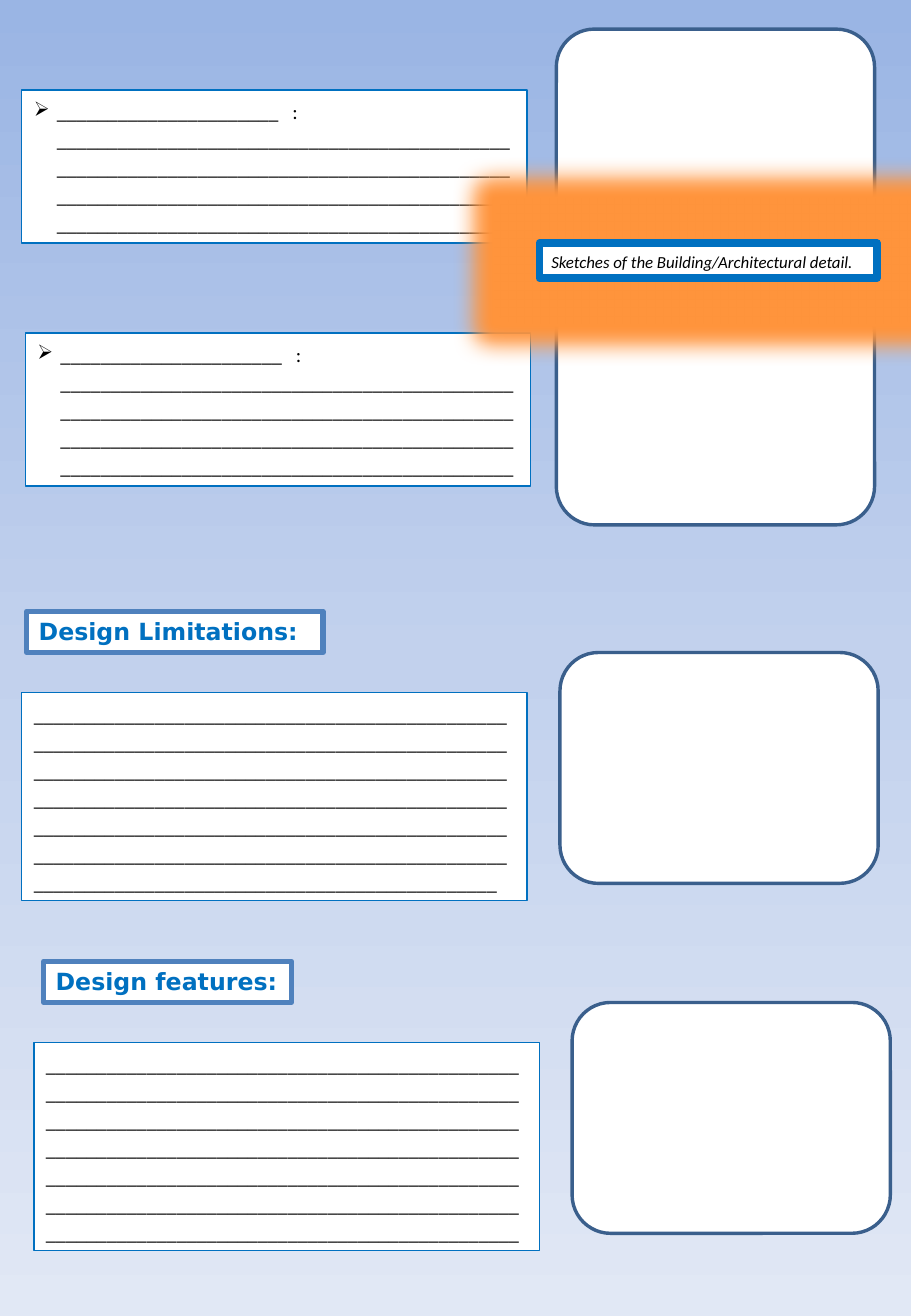
from copy import deepcopy

from lxml.etree import SubElement
from pptx import Presentation
from pptx.dml.color import RGBColor
from pptx.enum.shapes import MSO_SHAPE as Preset
from pptx.enum.text import MSO_ANCHOR, MSO_AUTO_SIZE, PP_ALIGN
from pptx.oxml.ns import qn
from pptx.util import Inches, Pt

WHITE = RGBColor(0xFF, 0xFF, 0xFF)
BLACK = RGBColor(0x00, 0x00, 0x00)
BLUE = RGBColor(0x00, 0x70, 0xC0)
HEADING_EDGE = RGBColor(0x4F, 0x81, 0xBD)
SKETCH_EDGE = RGBColor(0x3A, 0x5F, 0x8C)
GLOW = RGBColor(0xFF, 0x94, 0x3C)
SKY = [
    (0, RGBColor(0x9A, 0xB5, 0xE4)),
    (0.5, RGBColor(0xC2, 0xD1, 0xED)),
    (1, RGBColor(0xE1, 0xE8, 0xF5)),
]

NOTES_WIDTH = 4.16
SKETCH_WIDTH = 2.62
LABEL_BLANKS = 22
OBSERVATION_BLANKS = 180


def paint_background(slide):
    fill = slide.background.fill
    fill.gradient()
    fill.gradient_angle = 270
    stop_list = slide._element.find(".//" + qn("a:gsLst"))
    stop_list.insert(1, deepcopy(stop_list[0]))
    for stop, (position, color) in zip(fill.gradient_stops, SKY):
        stop.position = position
        stop.color.rgb = color


def add_panel(slide, box, edge, weight, preset=Preset.RECTANGLE):
    panel = slide.shapes.add_shape(preset, *(Inches(length) for length in box))
    panel.shadow.inherit = False
    panel.fill.solid()
    panel.fill.fore_color.rgb = WHITE
    panel.line.color.rgb = edge
    panel.line.width = Pt(weight)
    return panel


def write(panel, text, size, color=BLACK, font_name="Calibri", spaced=True):
    frame = panel.text_frame
    frame.word_wrap = True
    frame.auto_size = MSO_AUTO_SIZE.SHAPE_TO_FIT_TEXT
    frame.vertical_anchor = MSO_ANCHOR.TOP
    paragraph = frame.paragraphs[0]
    paragraph.alignment = PP_ALIGN.LEFT
    paragraph.add_run().text = text
    font = paragraph.font
    font.name, font.size, font.color.rgb = font_name, Pt(size), color
    if spaced:
        paragraph.line_spacing = 1.15
        paragraph.space_after = Pt(10)
    return paragraph


def add_bullet(paragraph):
    properties = paragraph._p.get_or_add_pPr()
    properties.set("marL", str(Inches(0.19)))
    properties.set("indent", str(-Inches(0.19)))
    bullet = properties.makeelement(qn("a:buChar"), {"char": "➢"})
    properties.find(qn("a:defRPr")).addprevious(bullet)


def add_sketch(slide, left, top, height=1.9):
    box = (left, top, SKETCH_WIDTH, height)
    add_panel(slide, box, SKETCH_EDGE, 2, Preset.ROUNDED_RECTANGLE)


def add_observation(slide, left, top):
    notes = add_panel(slide, (left, top, NOTES_WIDTH, 1.26), BLUE, 0.75)
    paragraph = write(notes, "_" * LABEL_BLANKS, 12)
    colon = paragraph.add_run()
    colon.text = " : "
    colon.font._element.set("spc", "540")
    paragraph.add_run().text = "_" * OBSERVATION_BLANKS
    add_bullet(paragraph)


def add_design_section(slide, left, top, title, title_shift, title_width, blanks):
    title_box = (left + title_shift, top - 0.67, title_width, 0.34)
    heading = add_panel(slide, title_box, HEADING_EDGE, 3)
    write(heading, title, 14, BLUE, "DejaVu Sans", spaced=False).font.bold = True
    notes = add_panel(slide, (left, top, NOTES_WIDTH, 1.71), BLUE, 0.75)
    write(notes, "_" * blanks, 12)
    add_sketch(slide, left + 4.43, top - 0.33)


def add_sketch_caption(slide, box):
    caption = add_panel(slide, box, BLUE, 4.5)
    text = "Sketches of the Building/Architectural detail."
    write(caption, text, 10).font.italic = True
    effects = caption._element.spPr.find(qn("a:effectLst"))
    glow = SubElement(effects, qn("a:glow"), rad=str(Inches(0.35)))
    SubElement(glow, qn("a:srgbClr"), val=str(GLOW))


def main():
    deck = Presentation()
    deck.slide_width, deck.slide_height = Inches(7.5), Inches(10.83)
    slide = deck.slides.add_slide(deck.slide_layouts[6])
    paint_background(slide)
    add_observation(slide, 0.18, 0.74)
    add_sketch(slide, 4.58, 0.24, 1.87)
    add_observation(slide, 0.21, 2.74)
    add_sketch(slide, 4.58, 2.42)
    add_design_section(slide, 0.18, 5.7, "Design Limitations:", 0.04, 2.44, 328)
    add_design_section(slide, 0.28, 8.58, "Design features:", 0.08, 2.04, 329)
    add_sketch_caption(slide, (4.44, 2, 2.78, 0.29))
    deck.save("out.pptx")


if __name__ == "__main__":
    main()
